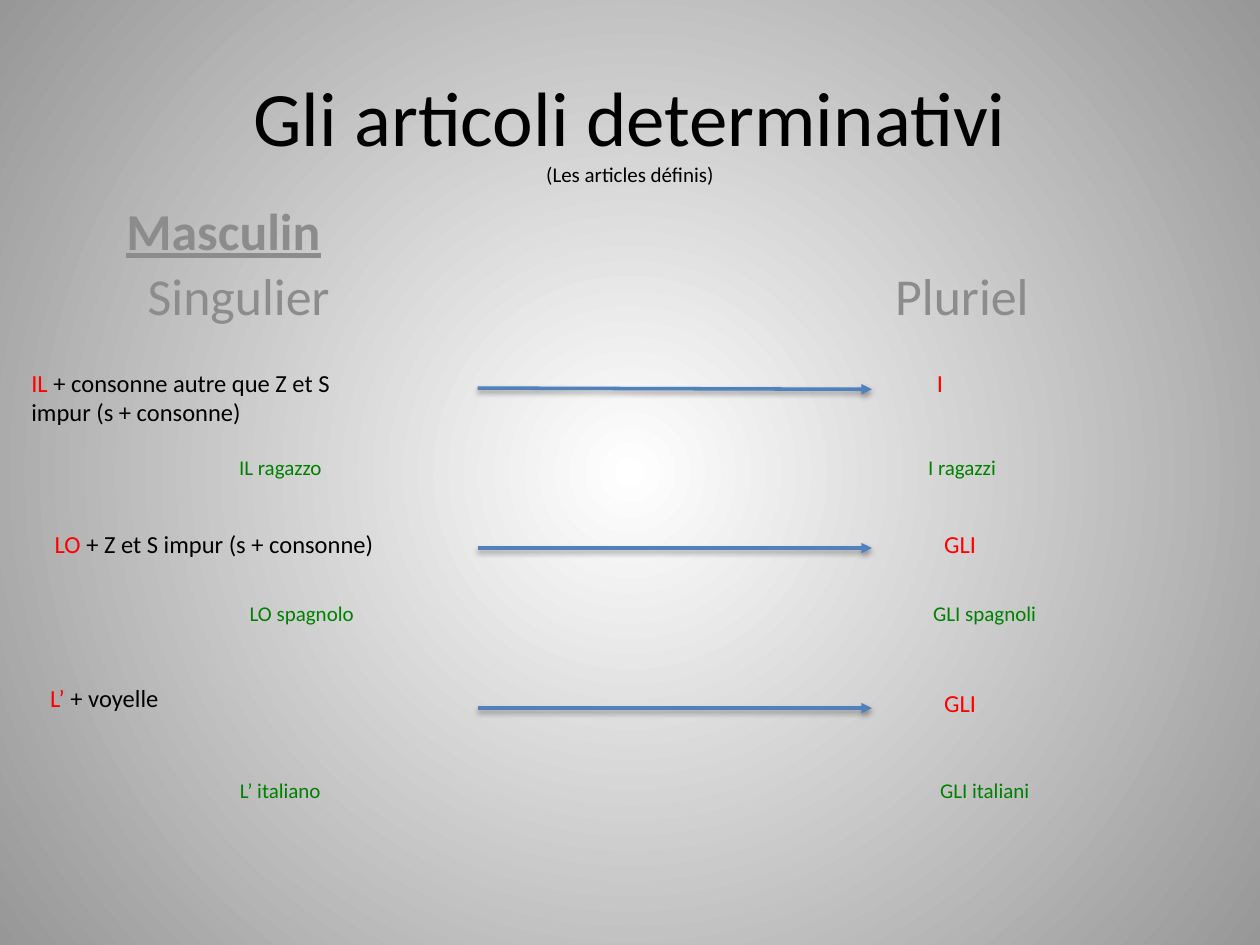
from lxml import etree
from pptx import Presentation
from pptx.dml.color import RGBColor
from pptx.enum.shapes import MSO_CONNECTOR
from pptx.enum.text import MSO_ANCHOR, PP_ALIGN
from pptx.oxml import parse_xml
from pptx.oxml.ns import nsdecls, qn
from pptx.util import Inches, Pt

BLACK, GREY, RED, GREEN, BLUE = "000000", "8C8C8C", "FF0000", "008000", "4F81BD"
BACKGROUND = ["FFFFFF", "979797"]
FONT = "Calibri"
HEADING = {"size": 29.6, "color": GREY}
LABEL_H, HEADING_H = 0.42, 0.57
EXAMPLE_W, PLURAL_W = 2.05, 0.7
ARROW_X = (3.79, 6.92)

TITLE = ("Gli articoli determinativi", "(Les articles définis)")

# text, left, top, extra format, line spacing
HEADINGS = [
    ("Masculin", 0.75, 1.53, {"bold": True, "underline": True}, 1),
    ("Singulier", 0.87, 2.1, {}, 0.9),
    ("Pluriel", 6.61, 2.1, {}, 0.9),
]

# rule: article, condition, left, top, width, alignment
# plural: article, left, top; examples: text, left, top, width
RULES = [
    {"rule": ("IL ", "+ consonne autre que Z et S impur (s + consonne)",
              0.15, 2.87, 2.79, PP_ALIGN.LEFT),
     "arrow": (3.08, 3.09),
     "plural": ("I", 7.11, 2.87),
     "examples": [("IL ragazzo", 1.2, 3.56, EXAMPLE_W),
                  ("I ragazzi", 6.61, 3.56, EXAMPLE_W)]},
    {"rule": ("LO ", "+ Z et S impur (s + consonne)",
              0.15, 4.15, 3.1, PP_ALIGN.CENTER),
     "arrow": (4.35, 4.35),
     "plural": ("GLI", 7.27, 4.15),
     "examples": [("LO spagnolo", 1.37, 4.72, EXAMPLE_W),
                  ("GLI spagnoli", 6.79, 4.72, EXAMPLE_W)]},
    {"rule": ("L’ ", "+ voyelle", 0.3, 5.37, 1.81, PP_ALIGN.LEFT),
     "arrow": (5.62, 5.62),
     "plural": ("GLI", 7.27, 5.41),
     "examples": [("L’ italiano", 1.37, 6.12, 1.71),
                  ("GLI italiani", 6.79, 6.12, EXAMPLE_W)]},
]


def rgb(value):
    return RGBColor.from_string(value)


def add_run(p, text, size, color, **fmt):
    r = p.add_run()
    r.text = text
    for name, value in {"name": FONT, "size": Pt(size), **fmt}.items():
        setattr(r.font, name, value)
    r.font.color.rgb = rgb(color)


def add_text(s, box, runs, align=PP_ALIGN.CENTER, spacing=1):
    """Add a one-paragraph text box and return its text frame."""
    tf = s.shapes.add_textbox(*map(Inches, box)).text_frame
    tf.word_wrap = True
    p = tf.paragraphs[0]
    p.alignment, p.line_spacing = align, spacing
    for run in runs:
        add_run(p, **run)
    return tf


def add_arrow(s, y1, y2):
    x1, x2 = ARROW_X
    line = s.shapes.add_connector(MSO_CONNECTOR.STRAIGHT,
                                  *map(Inches, (x1, y1, x2, y2)))
    line.line.color.rgb = rgb(BLUE)
    line.line.width = Pt(2)
    etree.SubElement(line.line._get_or_add_ln(), qn("a:tailEnd"), type="triangle")
    line._element.spPr.append(parse_xml(
        f'<a:effectLst {nsdecls("a")}>'
        f'<a:outerShdw blurRad="{Pt(3.1)}" dist="{Pt(1.6)}" dir="5400000" rotWithShape="0">'
        f'<a:srgbClr val="{BLACK}"><a:alpha val="38000"/></a:srgbClr>'
        '</a:outerShdw></a:effectLst>'))


def paint_background(s):
    """Fill the background with a circular gradient from the centre."""
    fill = s.background.fill
    fill.gradient()
    for stop, color in zip(fill.gradient_stops, BACKGROUND):
        stop.color.rgb = rgb(color)
    lin = next(s._element.iter(qn("a:lin")))
    lin.getparent().replace(lin, parse_xml(
        f'<a:path {nsdecls("a")} path="circle">'
        '<a:fillToRect l="50000" t="50000" r="50000" b="50000"/></a:path>'))


def main():
    prs = Presentation()
    prs.slide_width, prs.slide_height = Inches(10), Inches(7.5)
    s = prs.slides.add_slide(prs.slide_layouts[6])
    paint_background(s)

    title, subtitle = TITLE
    tf = add_text(s, (0.75, 0.21, 8.5, 1.61),
                  [{"text": title, "size": 44, "color": BLACK}])
    tf.vertical_anchor = MSO_ANCHOR.MIDDLE
    tf.paragraphs[0].add_line_break()
    add_run(tf.paragraphs[0], subtitle, 12, BLACK)

    for text, x, y, fmt, spacing in HEADINGS:
        add_text(s, (x, y, EXAMPLE_W, HEADING_H),
                 [{"text": text, **HEADING, **fmt}], spacing=spacing)

    for row in RULES:
        article, condition, x, y, w, align = row["rule"]
        add_text(s, (x, y, w, LABEL_H),
                 [{"text": article, "size": 14, "color": RED},
                  {"text": condition, "size": 14, "color": BLACK}], align)
        add_arrow(s, *row["arrow"])
        plural, x, y = row["plural"]
        add_text(s, (x, y, PLURAL_W, LABEL_H),
                 [{"text": plural, "size": 14, "color": RED}])
        for text, x, y, w in row["examples"]:
            add_text(s, (x, y, w, LABEL_H),
                     [{"text": text, "size": 12, "color": GREEN}])

    prs.save("out.pptx")


if __name__ == "__main__":
    main()
